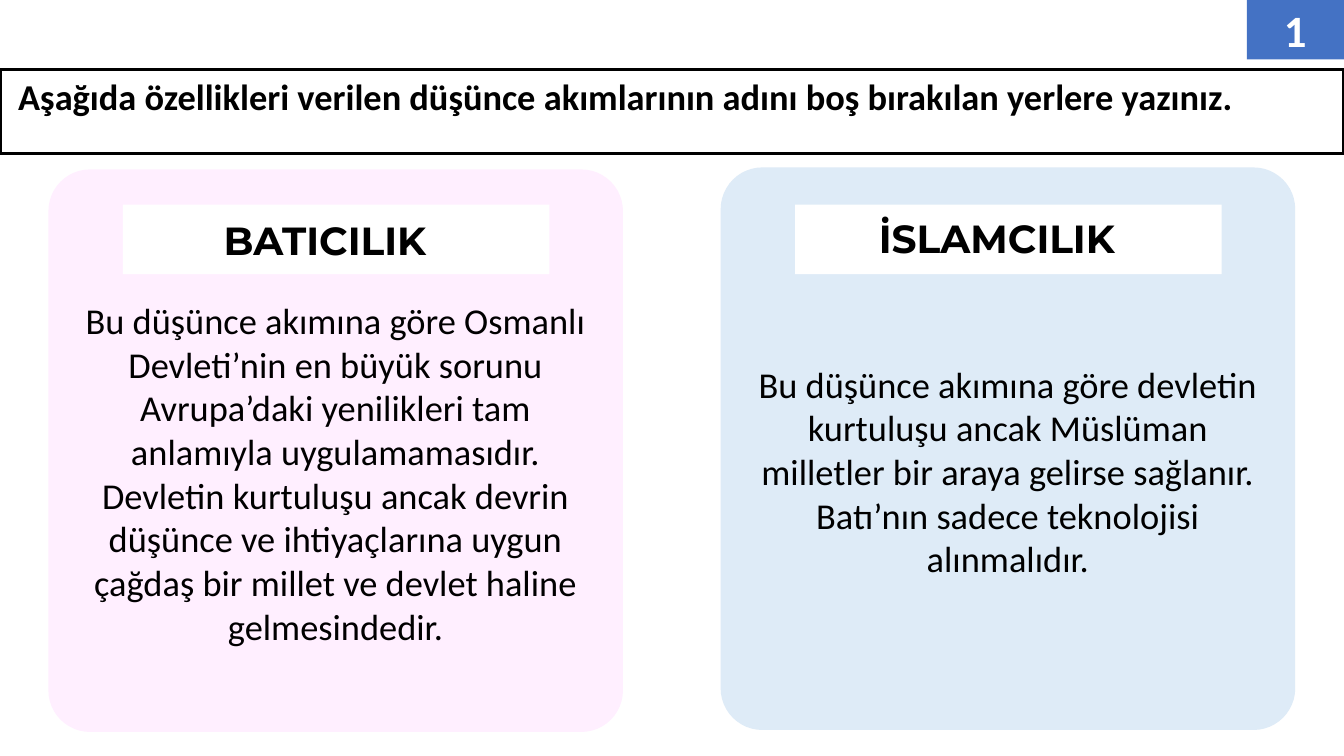
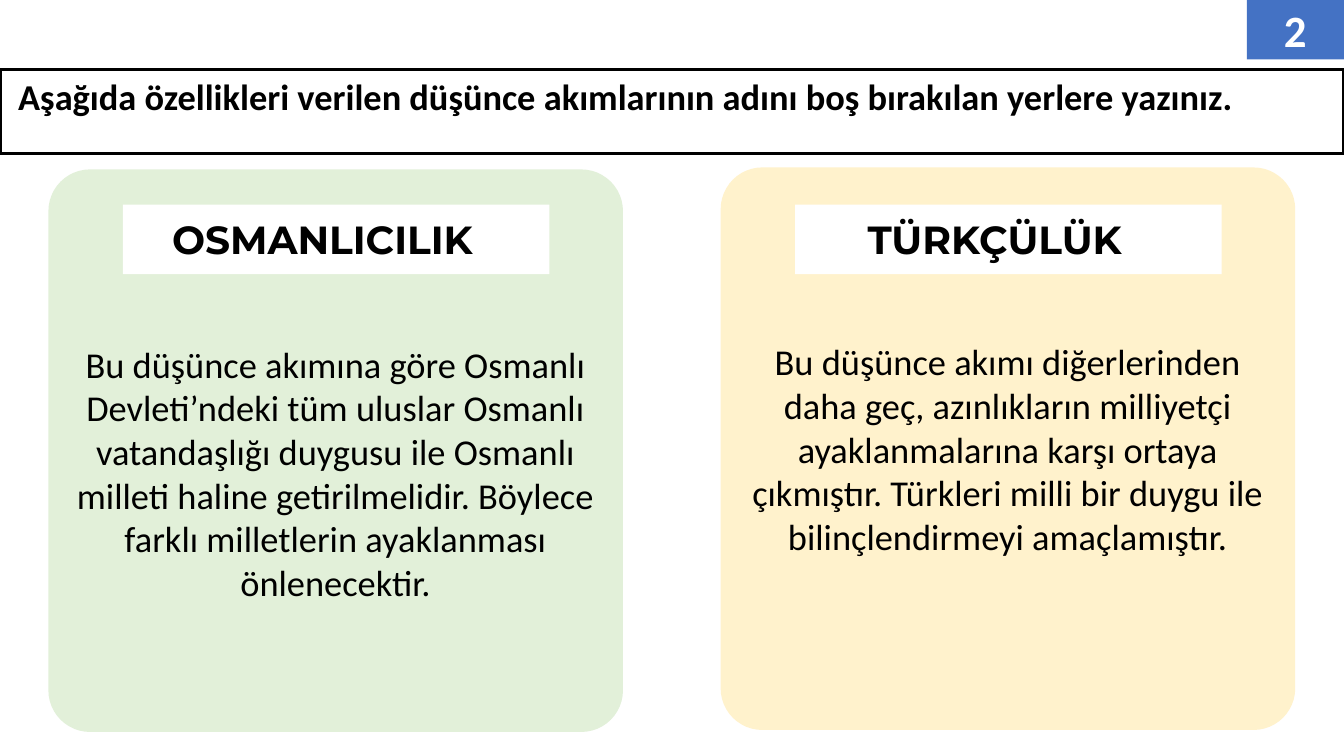
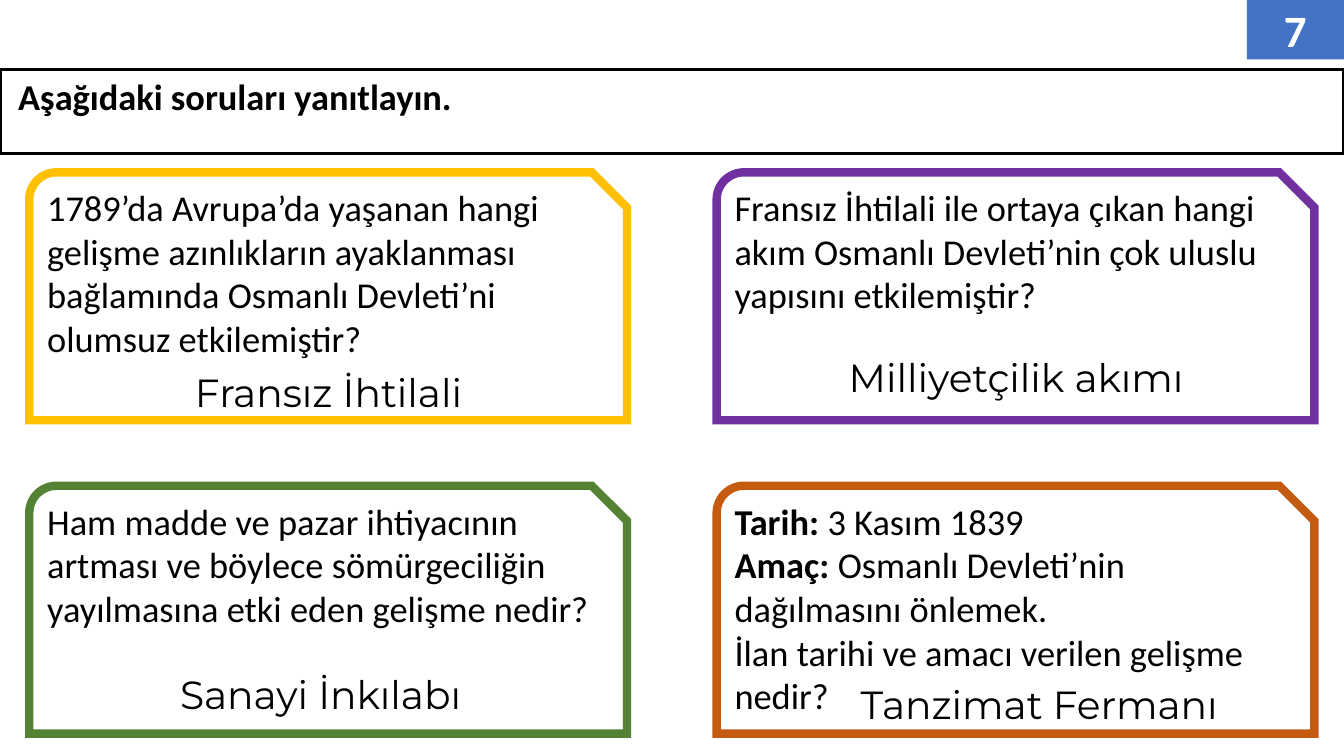
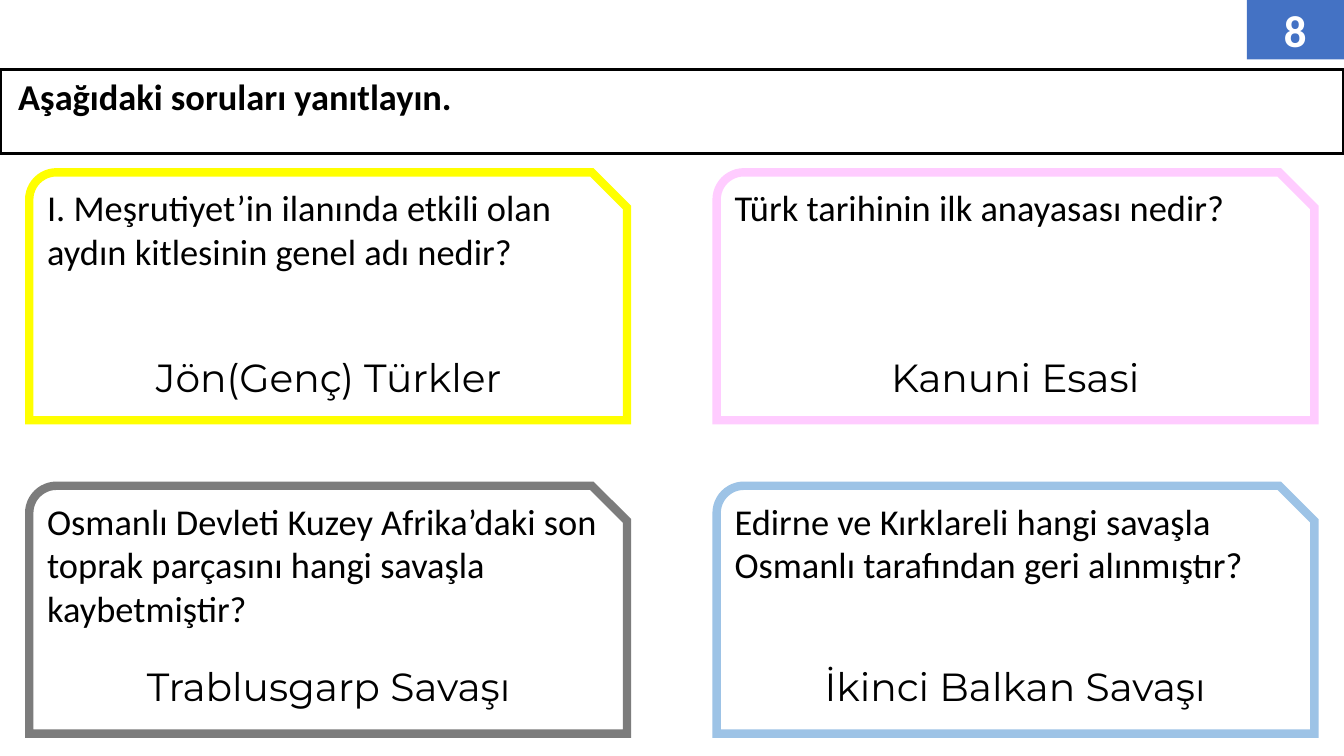
import pptx
import pptx.dml.color
import pptx.enum.shapes
import pptx.enum.text
import pptx.oxml.ns
import pptx.util
from lxml import etree

Pt = pptx.util.Pt
SHAPES = pptx.enum.shapes.MSO_SHAPE
ALIGN = pptx.enum.text.PP_ALIGN
ANCHOR = pptx.enum.text.MSO_ANCHOR
AUTO = pptx.enum.text.MSO_AUTO_SIZE

# Shared style
SLIDE_W, SLIDE_H = 960, 540
BLACK, WHITE, BLUE = "000000", "FFFFFF", "4472C4"
BODY_FONT, ANSWER_FONT = "Calibri", "Montserrat"
BODY_SIZE, ANSWER_SIZE, NUMBER_SIZE = 26, 28, 32
LABEL_H = 41

# Layout of the two idea cards
CARD_LEFT, CARD_TOPS, CARD_W, CARD_H = 34.6, (121, 119.6), 410.4, 401.8
SLOT_LEFT, SLOT_TOP, SLOT_W, SLOT_H = 87.8, 146.2, 304.6, 49.7
CARD_PITCH = 480.2
LABEL_CENTRES = (239.4, 720.4)
LOWERED = 31.7  # one body line of extra space above the text

# Layout of the four question cards
QUESTION_LEFT, QUESTION_TOP, QUESTION_W, QUESTION_H = 20.9, 123.1, 427, 177.1
QUESTION_PITCH_X, QUESTION_PITCH_Y = 491, 223.9
ANSWER_W = 416.2

# Content
NAME_TASK = ("Aşağıda özellikleri verilen düşünce akımlarının adını "
             "boş bırakılan yerlere yazınız.")
ANSWER_TASK = "Aşağıdaki soruları yanıtlayın."

# Idea: fill, description, lowered text, name, name top, name width
IDEA_SLIDES = [
    ("1", [
        ("FFEFFF", "Bu düşünce akımına göre Osmanlı Devleti’nin en büyük sorunu "
         "Avrupa’daki yenilikleri tam anlamıyla uygulamamasıdır. Devletin "
         "kurtuluşu ancak devrin düşünce ve ihtiyaçlarına uygun çağdaş bir "
         "millet ve devlet haline gelmesindedir.", True, "BATICILIK", 151.2, 173.6),
        ("DEEBF7", "Bu düşünce akımına göre devletin kurtuluşu ancak Müslüman "
         "milletler bir araya gelirse sağlanır. Batı’nın sadece teknolojisi "
         "alınmalıdır.", True, "İSLAMCILIK", 149.8, 199.4),
    ]),
    ("2", [
        ("E2F0D9", "Bu düşünce akımına göre Osmanlı Devleti’ndeki tüm uluslar "
         "Osmanlı vatandaşlığı duygusu ile Osmanlı milleti haline "
         "getirilmelidir. Böylece farklı milletlerin ayaklanması "
         "önlenecektir.", True, "OSMANLICILIK", 150.5, 247),
        ("FFF2CC", "Bu düşünce akımı diğerlerinden daha geç, azınlıkların "
         "milliyetçi ayaklanmalarına karşı ortaya çıkmıştır. Türkleri milli "
         "bir duygu ile bilinçlendirmeyi amaçlamıştır.", False,
         "TÜRKÇÜLÜK", 150.5, 215.3),
    ]),
]

# Question, row by row: outline, paragraphs of (text, bold), answer, answer left, answer top
QUESTION_SLIDES = [
    ("7", [
        ("FFC000", [[("1789’da Avrupa’da yaşanan hangi gelişme azınlıkların "
                      "ayaklanması bağlamında Osmanlı Devleti’ni olumsuz "
                      "etkilemiştir?", False)]],
         "Fransız İhtilali", 26.6, 259.2),
        ("7030A0", [[("Fransız İhtilali ile ortaya çıkan hangi akım Osmanlı "
                      "Devleti’nin çok uluslu yapısını etkilemiştir?", False)]],
         "Milliyetçilik akımı", 517.7, 249.1),
        ("548235", [[("Ham madde ve pazar ihtiyacının artması ve böylece "
                      "sömürgeciliğin yayılmasına etki eden gelişme nedir?", False)]],
         "Sanayi İnkılabı", 20.9, 475.2),
        ("C55A11", [[("Tarih: ", True), ("3 Kasım 1839", False)],
                    [("Amaç: ", True),
                     ("Osmanlı Devleti’nin dağılmasını önlemek.", False)],
                    [("İlan tarihi ve amacı verilen gelişme nedir?", False)]],
         "Tanzimat Fermanı", 534.2, 482.4),
    ]),
    ("8", [
        ("FFFF00", [[("I. Meşrutiyet’in ilanında etkili olan aydın kitlesinin "
                      "genel adı nedir?", False)]],
         "Jön(Genç) Türkler", 26.6, 249.1),
        ("FFCCFF", [[("Türk tarihinin ilk anayasası nedir?", False)]],
         "Kanuni Esasi", 517, 249.1),
        ("7C7C7C", [[("Osmanlı Devleti Kuzey Afrika’daki son toprak parçasını "
                      "hangi savaşla kaybetmiştir?", False)]],
         "Trablusgarp Savaşı", 26.6, 469.4),
        ("9DC3E6", [[("Edirne ve Kırklareli hangi savaşla Osmanlı tarafından "
                      "geri alınmıştır?", False)]],
         "İkinci Balkan Savaşı", 517, 469.4),
    ]),
]


# Helpers
def rgb(hex_colour):
    return pptx.dml.color.RGBColor.from_string(hex_colour)


def set_outline(shape, colour, width):
    shape.line.color.rgb = rgb(colour)
    shape.line.width = Pt(width)
    line = shape.line.color and shape.element.spPr.find(pptx.oxml.ns.qn("a:ln"))
    etree.SubElement(line, pptx.oxml.ns.qn("a:miter"), lim="800000")


def write(shape, paragraphs, size=BODY_SIZE, font=BODY_FONT, colour=BLACK,
          align=ALIGN.LEFT, anchor=ANCHOR.TOP, wrap=True, auto_size=AUTO.NONE):
    """Fill a shape with paragraphs, each a list of (text, bold) runs."""
    frame = shape.text_frame
    frame.word_wrap = wrap
    frame.auto_size = auto_size
    frame.vertical_anchor = anchor
    for index, runs in enumerate(paragraphs):
        paragraph = frame.add_paragraph() if index else frame.paragraphs[0]
        paragraph.alignment = align
        for text, bold in runs:
            run = paragraph.add_run()
            run.text = text
            run.font.size = Pt(size)
            run.font.name = font
            run.font.bold = bold
            run.font.color.rgb = rgb(colour)


def add_panel(slide, kind, left, top, width, height, fill=None, outline=None,
              adjustments=()):
    panel = slide.shapes.add_shape(kind, Pt(left), Pt(top), Pt(width), Pt(height))
    panel.shadow.inherit = False
    for index, value in enumerate(adjustments):
        panel.adjustments[index] = value
    if fill:
        panel.fill.solid()
        panel.fill.fore_color.rgb = rgb(fill)
    else:
        panel.fill.background()
    if outline:
        set_outline(panel, outline, 6)
    else:
        panel.line.fill.background()
    return panel


def add_label(slide, text, left, top, width, **style):
    label = slide.shapes.add_textbox(Pt(left), Pt(top), Pt(width), Pt(LABEL_H))
    write(label, [[(text, style.pop("bold", False))]], ANSWER_SIZE, ANSWER_FONT,
          auto_size=AUTO.SHAPE_TO_FIT_TEXT, **style)


def add_task_slide(deck, number, task):
    """Add a slide with its task bar and number badge."""
    slide = deck.slides.add_slide(deck.slide_layouts[5])
    title = slide.shapes.title
    title.left, title.top = Pt(0), Pt(49.7)
    title.width, title.height = Pt(SLIDE_W), Pt(38.9)
    set_outline(title, BLACK, 2.25)
    write(title, [[(task, True)]], auto_size=AUTO.SHAPE_TO_FIT_TEXT)
    title.text_frame.margin_left = Pt(13)

    badge = add_panel(slide, SHAPES.RECTANGLE, 890.6, 0, 69.4, 42.5, BLUE)
    write(badge, [[(number, True)]], NUMBER_SIZE, colour=WHITE,
          align=ALIGN.CENTER, anchor=ANCHOR.MIDDLE)
    return slide


# Content elements
def add_idea(slide, column, fill, description, lowered, name, name_top, name_width):
    shift = column * CARD_PITCH
    card = add_panel(slide, SHAPES.ROUNDED_RECTANGLE, CARD_LEFT + shift,
                     CARD_TOPS[column], CARD_W, CARD_H, fill, adjustments=[0.074])
    write(card, [[(description, False)]], align=ALIGN.CENTER, anchor=ANCHOR.MIDDLE)
    if lowered:
        card.text_frame.margin_top = Pt(3.6 + LOWERED)
    add_panel(slide, SHAPES.RECTANGLE, SLOT_LEFT + shift, SLOT_TOP,
              SLOT_W, SLOT_H, WHITE)
    add_label(slide, name, LABEL_CENTRES[column] - name_width / 2, name_top,
              name_width, bold=True, wrap=False)


def add_question(slide, index, outline, question, answer, answer_left, answer_top):
    row, column = divmod(index, 2)
    card = add_panel(slide, SHAPES.SNIP_ROUND_RECTANGLE,
                     QUESTION_LEFT + column * QUESTION_PITCH_X,
                     QUESTION_TOP + row * QUESTION_PITCH_Y,
                     QUESTION_W, QUESTION_H, outline=outline,
                     adjustments=[0.11, 0.142])
    write(card, question)
    add_label(slide, answer, answer_left, answer_top, ANSWER_W, align=ALIGN.CENTER)


def main():
    deck = pptx.Presentation()
    deck.slide_width, deck.slide_height = Pt(SLIDE_W), Pt(SLIDE_H)
    for slides, task, add_item in ((IDEA_SLIDES, NAME_TASK, add_idea),
                                   (QUESTION_SLIDES, ANSWER_TASK, add_question)):
        for number, items in slides:
            slide = add_task_slide(deck, number, task)
            for index, item in enumerate(items):
                add_item(slide, index, *item)
    deck.save("out.pptx")


if __name__ == "__main__":
    main()
